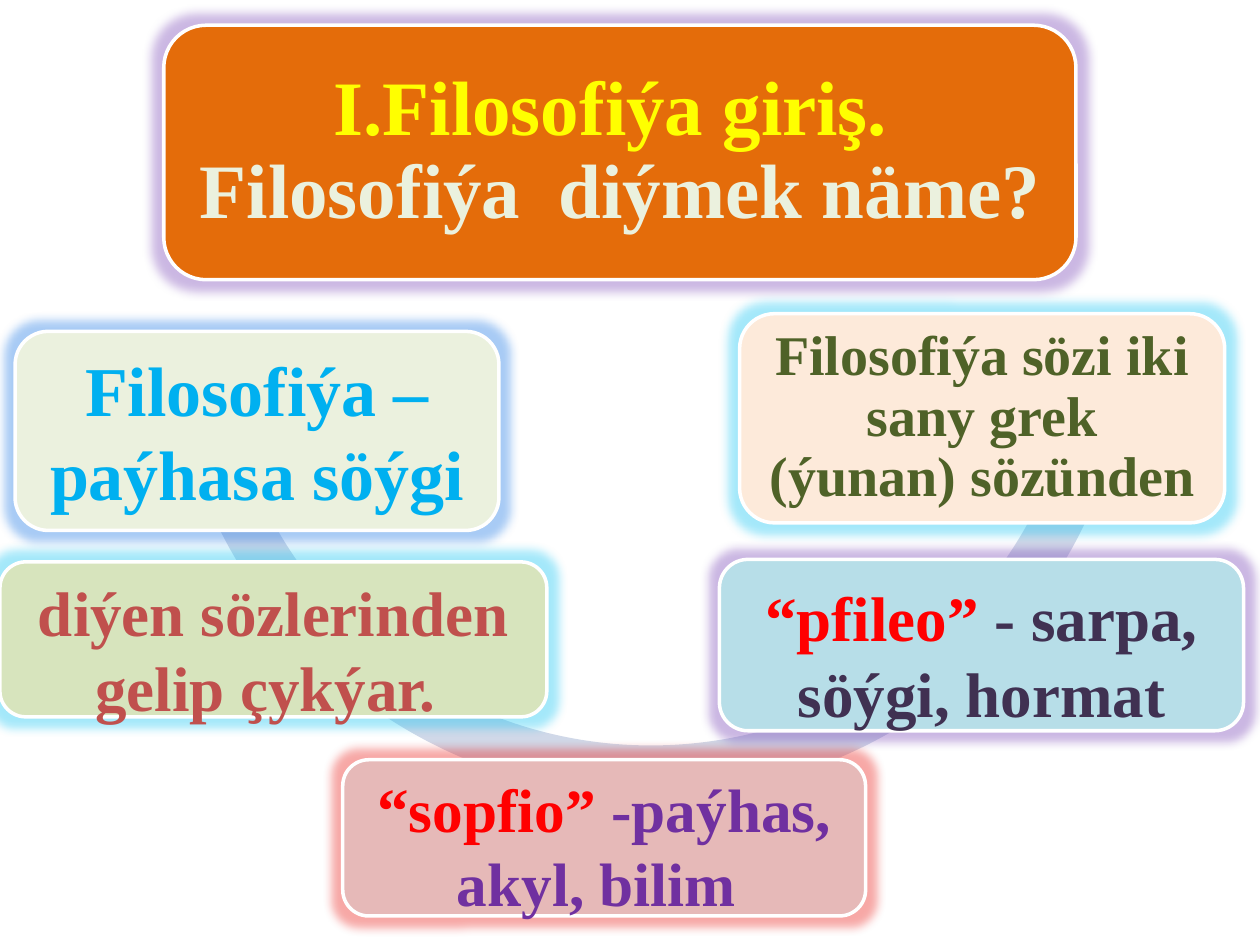
from dataclasses import dataclass

from lxml import etree
from pptx import Presentation
from pptx.dml.color import RGBColor
from pptx.enum.shapes import MSO_SHAPE
from pptx.enum.text import MSO_ANCHOR, MSO_AUTO_SIZE, PP_ALIGN
from pptx.oxml import parse_xml
from pptx.oxml.ns import nsdecls
from pptx.shapes.autoshape import Shape
from pptx.slide import Slide
from pptx.text.text import TextFrame
from pptx.util import Inches, Pt

ROUNDED = MSO_SHAPE.ROUNDED_RECTANGLE
CIRCULAR_ARROW = MSO_SHAPE.CIRCULAR_ARROW
MIDDLE = MSO_ANCHOR.MIDDLE
CENTER = PP_ALIGN.CENTER
NO_AUTOFIT = MSO_AUTO_SIZE.NONE
TITLE_ONLY = 5


@dataclass(frozen=True)
class Theme:
    font: str = "Times New Roman"
    title_size: int = 44
    definition_size: int = 40
    term_size: int = 36
    meaning_size: int = 35
    origin_size: int = 32
    outline: str = "FFFFFF"
    cycle: str = "D0D8E8"
    orange: str = "E46C0A"
    peach: str = "FDEADA"
    rose: str = "E6B9B8"
    green: str = "D7E4BD"
    aqua: str = "B7DEE8"
    ivory: str = "EBF1DE"
    yellow: str = "FFFF00"
    olive: str = "4F6228"
    red: str = "FF0000"
    violet: str = "7030A0"
    brick: str = "C0504D"
    plum: str = "403152"
    sky: str = "00B0F0"


THEME = Theme()


@dataclass(frozen=True)
class Words:
    text: str
    size: int
    color: str


@dataclass(frozen=True)
class Card:
    left: float
    top: float
    width: float
    height: float
    fill: str
    glow: str
    words: tuple[Words, ...] = ()
    side_inset: float = 0.15
    top_inset: float = 0.0
    line_spacing: float = 1.0


TITLE_LINES = (
    Words("I.Filosofiýa giriş. ", THEME.title_size, THEME.yellow),
    Words("Filosofiýa  diýmek näme?", THEME.title_size, THEME.ivory),
)

CARDS = (
    Card(1.3, 0.2, 7.24, 2.02, THEME.orange, "accent4"),
    Card(5.87, 2.49, 3.85, 1.66, THEME.peach, "accent5",
         (Words("Filosofiýa sözi iki sany grek (ýunan) sözünden",
                THEME.origin_size, THEME.olive),),
         side_inset=0.13, line_spacing=0.9),
    Card(2.72, 6.03, 4.15, 1.24, THEME.rose, "accent2",
         (Words("“", THEME.term_size, THEME.red),
          Words("sopfio” ", THEME.meaning_size, THEME.red),
          Words("-paýhas, akyl, bilim ", THEME.meaning_size, THEME.violet)),
         top_inset=0.1),
    Card(0, 4.46, 4.34, 1.23, THEME.green, "accent5",
         (Words("diýen sözlerinden gelip çykýar. ",
                THEME.term_size, THEME.brick),),
         top_inset=0.15),
    Card(5.71, 4.44, 4.16, 1.36, THEME.aqua, "accent4",
         (Words("“pfileo” ", THEME.term_size, THEME.red),
          Words("- sarpa, söýgi, hormat", THEME.term_size, THEME.plum)),
         top_inset=0.15),
    Card(0.12, 2.63, 3.84, 1.58, THEME.ivory, "accent1",
         (Words("Filosofiýa – paýhasa söýgi",
                THEME.definition_size, THEME.sky),),
         side_inset=0.17),
)


def add_words(paragraph, words: Words) -> None:
    run = paragraph.add_run()
    run.text = words.text
    run.font.name = THEME.font
    run.font.size = Pt(words.size)
    run.font.bold = True
    run.font.color.rgb = RGBColor.from_string(words.color)


def set_frame(frame: TextFrame, side: float, top: float, bottom: float) -> None:
    frame.word_wrap = True
    frame.auto_size = NO_AUTOFIT
    frame.vertical_anchor = MIDDLE
    frame.margin_left = frame.margin_right = Inches(side)
    frame.margin_top = Inches(top)
    frame.margin_bottom = Inches(bottom)


def add_glow(shape: Shape, accent: str) -> None:
    shape.shadow.inherit = False
    effects = shape._element.spPr.find("{*}effectLst")
    glow = parse_xml(f'<a:glow {nsdecls("a")} rad="139700"/>')
    effects.append(glow)
    color = etree.SubElement(glow, glow.tag.replace("glow", "schemeClr"), val=accent)
    for effect, value in (("satMod", "175000"), ("alpha", "40000")):
        etree.SubElement(color, glow.tag.replace("glow", effect), val=value)


def add_cycle(slide: Slide) -> None:
    cycle = slide.shapes.add_shape(
        CIRCULAR_ARROW, Inches(1.14), Inches(-1.53), Inches(8.05), Inches(8.05))
    for index, value in enumerate((0.05, 2.88, 101.68, -13.75, 0.05)):
        cycle.adjustments[index] = value
    cycle.shadow.inherit = False
    cycle.fill.solid()
    cycle.fill.fore_color.rgb = RGBColor.from_string(THEME.cycle)
    cycle.line.fill.background()


def add_card(slide: Slide, card: Card) -> None:
    shape = slide.shapes.add_shape(
        ROUNDED, Inches(card.left), Inches(card.top),
        Inches(card.width), Inches(card.height))
    shape.fill.solid()
    shape.fill.fore_color.rgb = RGBColor.from_string(card.fill)
    shape.line.color.rgb = RGBColor.from_string(THEME.outline)
    shape.line.width = Pt(2)
    add_glow(shape, card.glow)
    set_frame(shape.text_frame, card.side_inset, card.top_inset, 0)
    paragraph = shape.text_frame.paragraphs[0]
    paragraph.alignment = CENTER
    paragraph.line_spacing = card.line_spacing
    for words in card.words:
        add_words(paragraph, words)


def place_title(slide: Slide) -> None:
    title = slide.shapes.title
    title.left, title.top = Inches(1.4), Inches(0.3)
    title.width, title.height = Inches(7.05), Inches(1.82)
    set_frame(title.text_frame, 0.18, 0.18, 0.18)
    paragraph = title.text_frame.paragraphs[0]
    paragraph.alignment = CENTER
    paragraph.line_spacing = 0.9
    heading, question = TITLE_LINES
    add_words(paragraph, heading)
    paragraph.add_line_break()
    add_words(paragraph, question)
    slide.shapes._spTree.append(title._element)


def main() -> None:
    presentation = Presentation()
    presentation.slide_width = Inches(10)
    presentation.slide_height = Inches(7.5)
    slide = presentation.slides.add_slide(presentation.slide_layouts[TITLE_ONLY])
    add_cycle(slide)
    for card in CARDS:
        add_card(slide, card)
    place_title(slide)
    presentation.save("out.pptx")


if __name__ == "__main__":
    main()
